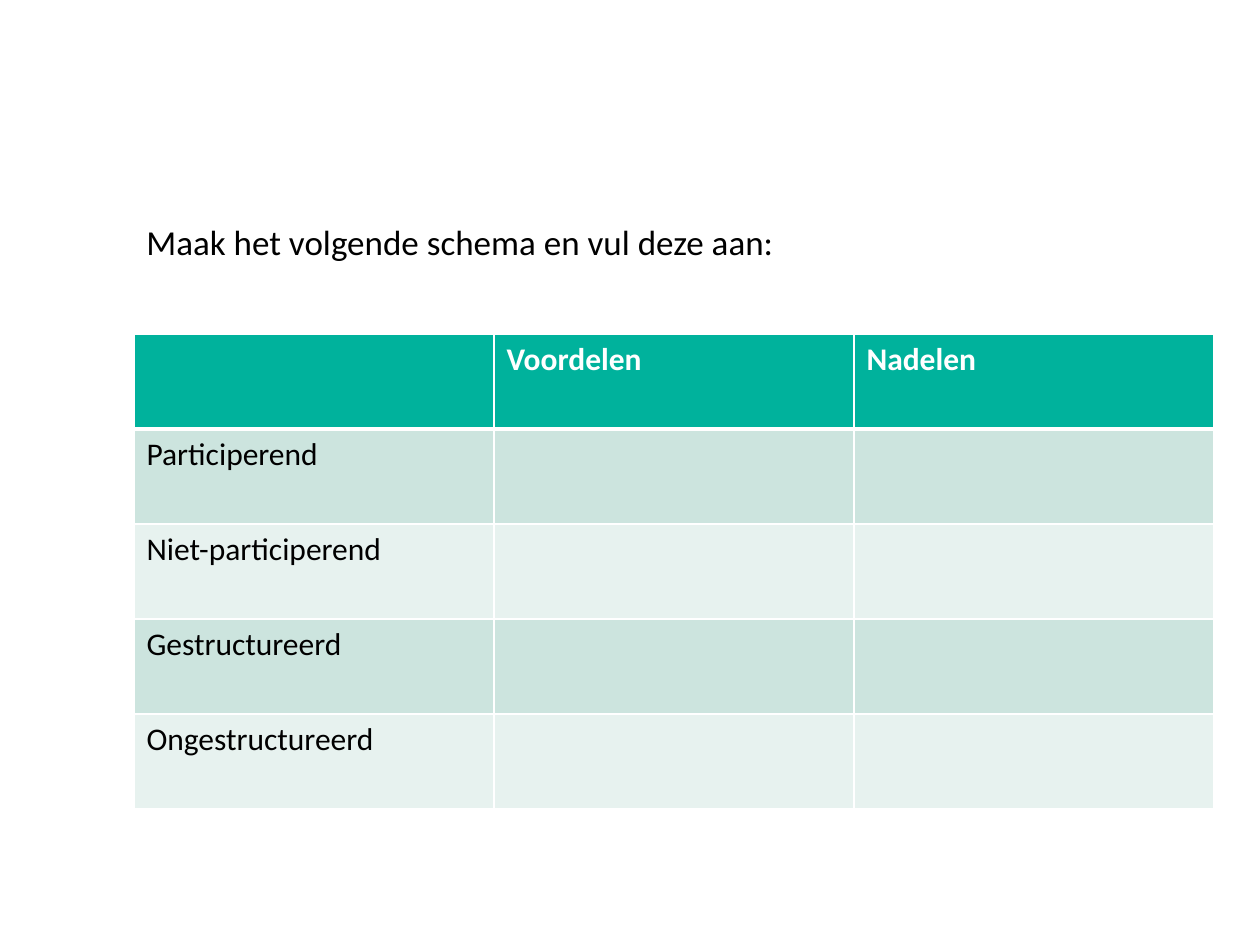
from lxml import etree
from pptx import Presentation
from pptx.dml.color import RGBColor
from pptx.oxml.ns import qn
from pptx.util import Emu, Pt

EMU_PER_PX = 914400 // 126
FONT = "Calibri"
COLORS = {
    "header": "00B29C",
    "band_dark": "CCE4DE",
    "band_light": "E7F2EF",
    "white": "FFFFFF",
    "black": "000000",
}
ROWS = [
    ["", "Voordelen", "Nadelen"],
    ["Participerend", "", ""],
    ["Niet-participerend", "", ""],
    ["Gestructureerd", "", ""],
    ["Ongestructureerd", "", ""],
]
COLUMN_WIDTH = 360
ROW_HEIGHT = 95


def px(length):
    return Emu(length * EMU_PER_PX)


def color(name):
    return RGBColor.from_string(COLORS[name])


def style_font(font, size, color_name, bold=False):
    font.name = FONT
    font.size = Pt(size)
    font.bold = bold
    font.color.rgb = color(color_name)


def add_instruction(page, text, left, top, width, height):
    box = page.shapes.add_textbox(px(left), px(top), px(width), px(height))
    box.text_frame.word_wrap = True
    box.text_frame.text = text
    span = box.text_frame.paragraphs[0].runs[0]
    style_font(span.font, 20, "black")


def set_borders(cell, bottom_points, top_points):
    """Draw white borders; they must precede the fill in the cell properties."""
    properties = cell._tc.get_or_add_tcPr()
    widths = {"lnL": 1, "lnR": 1, "lnT": top_points, "lnB": bottom_points}
    for position, (side, points) in enumerate(widths.items()):
        line = etree.Element(qn(f"a:{side}"), w=str(Pt(points)))
        fill = etree.SubElement(line, qn("a:solidFill"))
        etree.SubElement(fill, qn("a:srgbClr"), val=COLORS["white"])
        properties.insert(position, line)


def add_schema(page, left, top):
    row_count, column_count = len(ROWS), len(ROWS[0])
    frame = page.shapes.add_table(
        row_count, column_count, px(left), px(top),
        px(COLUMN_WIDTH * column_count), px(ROW_HEIGHT * row_count))
    table = frame.table
    for row_index, texts in enumerate(ROWS):
        is_header = row_index == 0
        if is_header:
            fill_name = "header"
        else:
            fill_name = "band_dark" if row_index % 2 else "band_light"
        for column_index, text in enumerate(texts):
            cell = table.cell(row_index, column_index)
            cell.text = text
            cell.fill.solid()
            cell.fill.fore_color.rgb = color(fill_name)
            set_borders(cell, 3 if is_header else 1, 3 if row_index == 1 else 1)
            style_font(cell.text_frame.paragraphs[0].font, 18,
                       "white" if is_header else "black", is_header)
            for span in cell.text_frame.paragraphs[0].runs:
                style_font(span.font, 18, "white" if is_header else "black", is_header)


def main():
    deck = Presentation()
    deck.slide_width, deck.slide_height = px(1260), px(945)
    page = deck.slides.add_slide(deck.slide_layouts[6])
    add_instruction(page, "Maak het volgende schema en vul deze aan:", 134, 214, 1063, 630)
    add_schema(page, 134, 334)
    deck.save("out.pptx")


if __name__ == "__main__":
    main()
